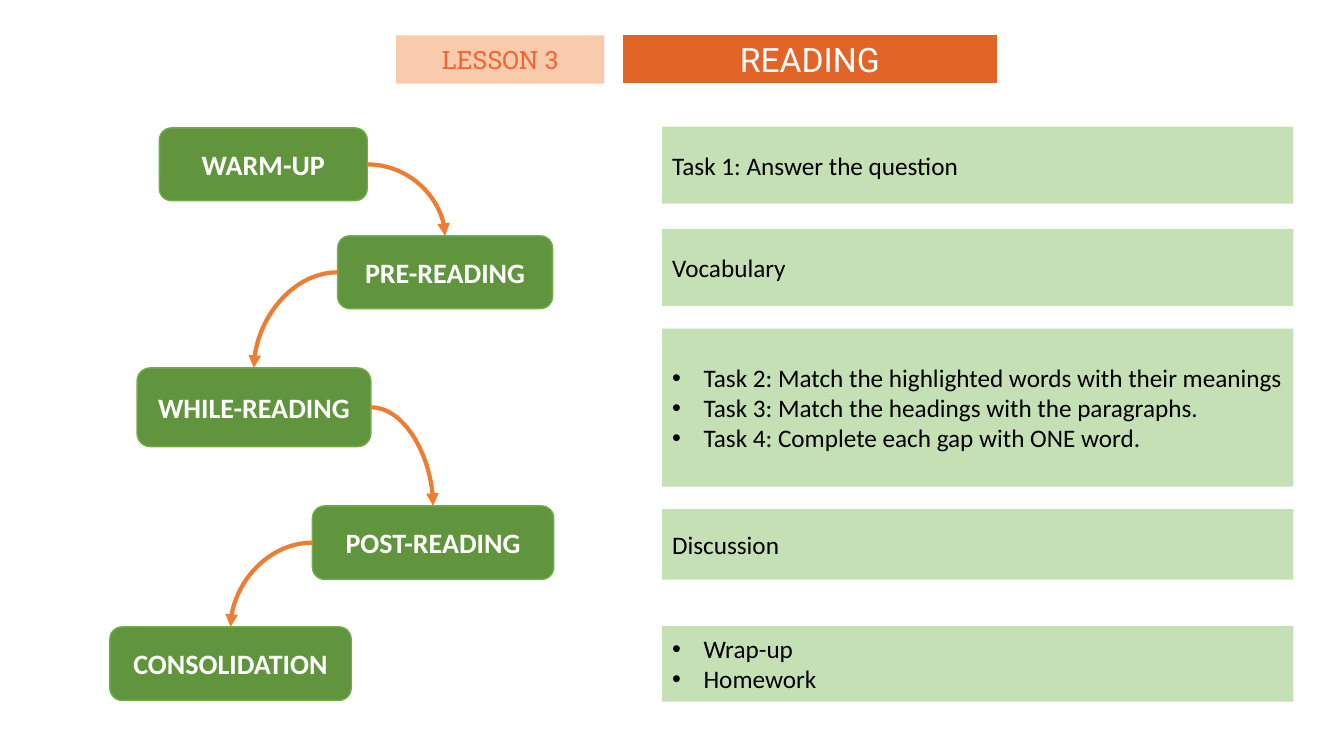
from itertools import pairwise

from lxml import etree
from pptx import Presentation
from pptx.dml.color import RGBColor
from pptx.enum.shapes import MSO_CONNECTOR, MSO_SHAPE
from pptx.enum.text import MSO_ANCHOR, PP_ALIGN
from pptx.oxml.ns import qn
from pptx.util import Pt

RECTANGLE = MSO_SHAPE.RECTANGLE
ROUNDED = MSO_SHAPE.ROUNDED_RECTANGLE
CURVE = MSO_CONNECTOR.CURVE
MIDDLE = MSO_ANCHOR.MIDDLE
LEFT, CENTER = PP_ALIGN.LEFT, PP_ALIGN.CENTER

WHITE = RGBColor(0xFF, 0xFF, 0xFF)
BLACK = RGBColor(0x00, 0x00, 0x00)
STAGE_GREEN = RGBColor(0x61, 0x95, 0x3D)
STAGE_BORDER = RGBColor(0x70, 0xAD, 0x47)
TASK_GREEN = RGBColor(0xC5, 0xE0, 0xB4)
ARROW_ORANGE = RGBColor(0xED, 0x7D, 0x31)
TITLE_ORANGE = RGBColor(0xE3, 0x64, 0x27)
LESSON_PEACH = RGBColor(0xF8, 0xCB, 0xAD)
LESSON_ORANGE = RGBColor(0xF2, 0x65, 0x32)

TOP_SITE, LEFT_SITE, RIGHT_SITE = 0, 1, 3
BULLET_INDENT = 22.5
TASK_LEFT, TASK_WIDTH = 473, 451

STAGES = [
    ("WARM-UP", 113.8, 91.4, 148.5, 52),
    ("PRE-READING", 241.2, 168.5, 153.5, 52),
    ("WHILE-READING", 97.9, 262.8, 167, 56.2),
    ("POST-READING", 223.2, 361.4, 172.4, 52.5),
    ("CONSOLIDATION", 78.5, 447.8, 172.4, 52.5),
]
TASKS = [
    (["Task 1: Answer the question"], 90.5, 55),
    (["Vocabulary"], 163.5, 55),
    (
        [
            "Task 2: Match the highlighted words with their meanings",
            "Task 3: Match the headings with the paragraphs.",
            "Task 4: Complete each gap with ONE word.",
        ],
        234.7,
        113,
    ),
    (["Discussion"], 363.6, 50.4),
    (["Wrap-up", "Homework"], 447.1, 54),
]


class LessonSlide:
    def __init__(self, slide):
        self.shapes = slide.shapes
        self.font_name = "Calibri"

    def box(self, kind, bounds, fill, lines, size, color, font_name=None,
            bold=False, align=CENTER, border=None, border_width=1):
        shape = self.shapes.add_shape(kind, *map(Pt, bounds))
        shape.shadow.inherit = False
        shape.fill.solid()
        shape.fill.fore_color.rgb = fill
        if border is None:
            shape.line.fill.background()
        else:
            shape.line.color.rgb = border
            shape.line.width = Pt(border_width)
        frame = shape.text_frame
        frame.word_wrap = True
        frame.vertical_anchor = MIDDLE
        frame.text = "\n".join(lines)
        for paragraph in frame.paragraphs:
            paragraph.alignment = align
            font = paragraph.font
            font.name = font_name or self.font_name
            font.size = Pt(size)
            font.bold = bold
            font.color.rgb = color
            if len(lines) > 1:
                self.bullet(paragraph)
        return shape

    def bullet(self, paragraph):
        properties = paragraph._p.get_or_add_pPr()
        properties.set("marL", str(Pt(BULLET_INDENT)))
        properties.set("indent", str(-Pt(BULLET_INDENT)))
        bullet_font = etree.Element(qn("a:buFont"), typeface="Arial")
        bullet_char = etree.Element(qn("a:buChar"), char="•")
        properties.insert(0, bullet_font)
        properties.insert(1, bullet_char)

    def stage(self, name, *bounds):
        return self.box(ROUNDED, bounds, STAGE_GREEN, [name], 20, WHITE,
                        bold=True, border=STAGE_BORDER)

    def task(self, lines, top, height):
        bounds = (TASK_LEFT, top, TASK_WIDTH, height)
        self.box(RECTANGLE, bounds, TASK_GREEN, lines, 18, BLACK, align=LEFT)

    def arrow(self, start, end):
        connector = self.shapes.add_connector(CURVE, 0, 0, 0, 0)
        start_site = RIGHT_SITE if start.left < end.left else LEFT_SITE
        connector.begin_connect(start, start_site)
        connector.end_connect(end, TOP_SITE)
        connector.line.color.rgb = ARROW_ORANGE
        connector.line.width = Pt(3)
        properties = connector._element.spPr
        properties.find(qn("a:prstGeom")).set("prst", "curvedConnector2")
        etree.SubElement(connector.line._get_or_add_ln(), qn("a:tailEnd"),
                         type="triangle")
        etree.SubElement(properties, qn("a:effectLst"))


def main():
    presentation = Presentation()
    presentation.slide_width = Pt(960)
    presentation.slide_height = Pt(540)
    blank_layout = presentation.slide_layouts[6]
    lesson = LessonSlide(presentation.slides.add_slide(blank_layout))

    lesson.box(RECTANGLE, (283, 25.2, 148.5, 34.6), LESSON_PEACH,
               ["LESSON 3"], 18, LESSON_ORANGE, font_name="Roboto Slab")
    lesson.box(RECTANGLE, (444.2, 24.5, 268.6, 35.3), TITLE_ORANGE,
               ["READING"], 24, WHITE, font_name="Roboto",
               border=WHITE, border_width=1.5)

    stages = [lesson.stage(*stage) for stage in STAGES]
    for start, end in pairwise(stages):
        lesson.arrow(start, end)
    for task in TASKS:
        lesson.task(*task)

    presentation.save("out.pptx")


if __name__ == "__main__":
    main()
